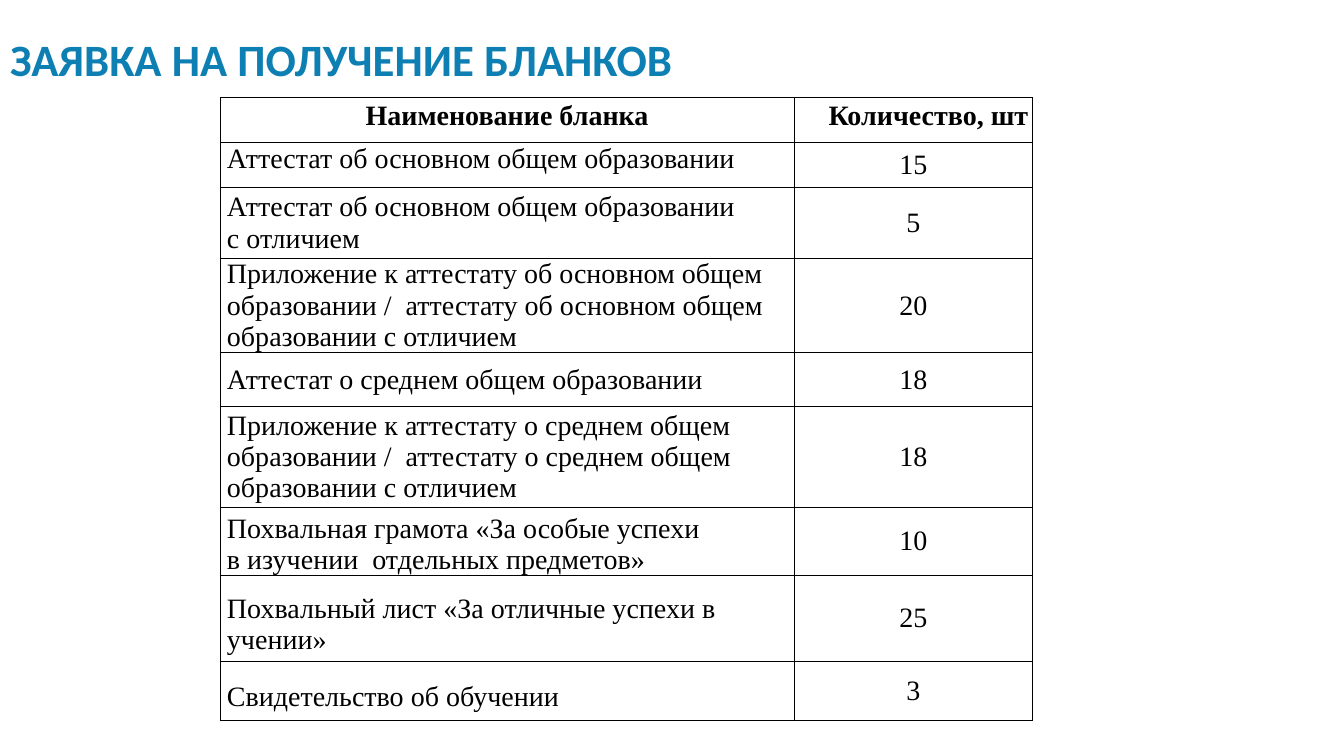
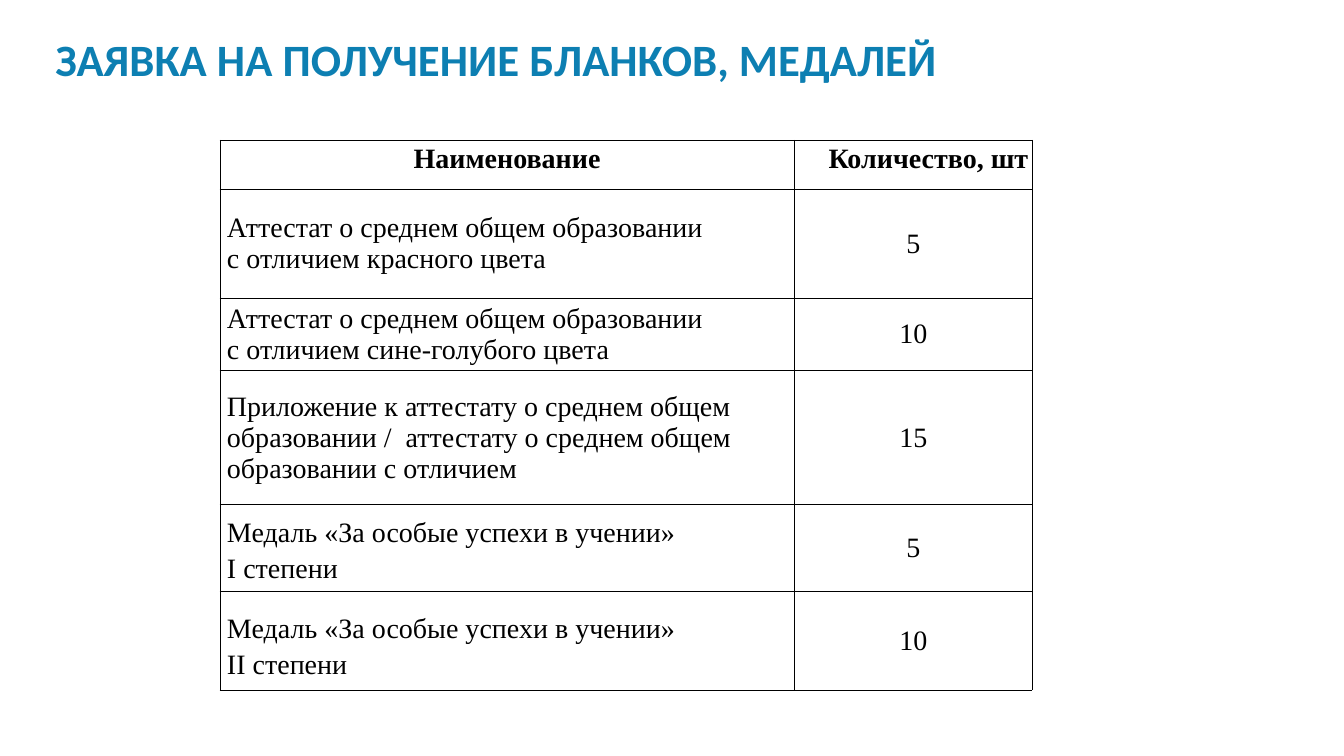
from lxml.etree import SubElement
from pptx import Presentation
from pptx.dml.color import RGBColor
from pptx.enum.text import MSO_ANCHOR as ANCHOR, MSO_AUTO_SIZE as AUTO, PP_ALIGN as ALIGN
from pptx.oxml.ns import qn
from pptx.util import Cm, Pt

BLUE, BLACK = "0D7FB2", "000000"
TITLE = dict(name="Calibri", size=Pt(32), bold=True)
HEAD = dict(name="Times New Roman", size=Pt(20), bold=True)
BODY = dict(HEAD, bold=False)
BORDER = Pt(0.5)
TABLE_LEFT = 5.54
COLUMNS = (14.48, 5.99)
INDENT = 0.18

FORMS = [
    ("Аттестат об основном общем образовании", "15", 1.14, dict(line=Pt(13.4))),
    ("Аттестат об основном общем образовании\nс отличием", "5", 1.8, {}),
    ("Приложение к аттестату об основном общем образовании /  "
     "аттестату об основном общем образовании с отличием", "20", 2.36, {}),
    ("Аттестат о среднем общем образовании", "18", 1.37, {}),
    ("Приложение к аттестату о среднем общем образовании /  "
     "аттестату о среднем общем образовании с отличием", "18", 2.54, {}),
    ("Похвальная грамота «За особые успехи\vв изучении  отдельных предметов»",
     "10", 1.71, dict(top=0.13)),
    ("Похвальный лист «За отличные успехи в учении»", "25", 2.16, dict(top=0.33)),
    ("Свидетельство об обучении", "3", 1.5, dict(top=0.33)),
]
MEDALS = [
    ("Аттестат о среднем общем образовании\nс отличием красного цвета", "5", 2.74, {}),
    ("Аттестат о среднем общем образовании\nс отличием сине-голубого цвета",
     "10", 1.83, {}),
    ("Приложение к аттестату о среднем общем образовании /  "
     "аттестату о среднем общем образовании с отличием", "15", 3.38, {}),
    ("Медаль «За особые успехи в учении»\nI степени", "5", 2.18,
     dict(top=0.13, gap=3.7)),
    ("Медаль «За особые успехи в учении»\nII степени", "10", 2.49,
     dict(top=0.33, gap=3.7)),
]


def rgb(value):
    return RGBColor.from_string(value)


def apply(target, values):
    for key, value in values.items():
        setattr(target, key, value)


def write(tf, text, font, color, align=ALIGN.LEFT, line=None, gap=0):
    tf.text = text
    for i, p in enumerate(tf.paragraphs):
        apply(p, dict(alignment=align, line_spacing=line,
                      space_before=Pt(gap if i else 0)))
        for r in p.runs:
            apply(r.font, font)
            r.font.color.rgb = rgb(color)


def add_title(s, text, left, width):
    sp = s.shapes.title
    apply(sp, dict(left=Cm(left), top=Cm(0), width=Cm(width), height=Cm(3.1)))
    apply(sp.text_frame, dict(word_wrap=True, auto_size=AUTO.NONE,
                              vertical_anchor=ANCHOR.MIDDLE))
    write(sp.text_frame, text, TITLE, BLUE, line=0.9)


def add_borders(cell):
    tc_pr = cell._tc.get_or_add_tcPr()
    for side in ("a:lnL", "a:lnR", "a:lnT", "a:lnB"):
        ln = SubElement(tc_pr, qn(side), w=str(BORDER))
        SubElement(SubElement(ln, qn("a:solidFill")), qn("a:srgbClr"), val=BLACK)


def fill_cell(cell, text, font, anchor=ANCHOR.MIDDLE, left=0, top=0, **style):
    apply(cell, dict(margin_left=Cm(left), margin_top=Cm(top), margin_right=0,
                     margin_bottom=0, vertical_anchor=anchor))
    add_borders(cell)
    cell.fill.background()
    write(cell.text_frame, text, font, BLACK, **style)


def add_order_table(s, top, head, head_height, rows):
    heights = [head_height] + [row[2] for row in rows]
    table = s.shapes.add_table(len(heights), len(COLUMNS), Cm(TABLE_LEFT), Cm(top),
                               Cm(sum(COLUMNS)), Cm(sum(heights))).table
    apply(table, dict(first_row=False, horz_banding=False))
    for column, width in zip(table.columns, COLUMNS):
        column.width = Cm(width)
    for row, height in zip(table.rows, heights):
        row.height = Cm(height)
    header = dict(font=HEAD, anchor=ANCHOR.TOP, top=0.08)
    fill_cell(table.cell(0, 0), head, align=ALIGN.CENTER, **header)
    fill_cell(table.cell(0, 1), "Количество, шт", left=0.86, **header)
    for i, (name, count, _, style) in enumerate(rows, 1):
        fill_cell(table.cell(i, 0), name, BODY, left=INDENT, **style)
        fill_cell(table.cell(i, 1), count, BODY, align=ALIGN.CENTER)


def add_order_slide(prs, title, left, width, **table):
    s = prs.slides.add_slide(prs.slide_layouts.get_by_name("Title Only"))
    add_title(s, title, left, width)
    add_order_table(s, **table)


def main():
    prs = Presentation()
    apply(prs, dict(slide_width=Cm(33.87), slide_height=Cm(19.05)))
    add_order_slide(prs, "ЗАЯВКА НА ПОЛУЧЕНИЕ БЛАНКОВ", 0, 22.76,
                    top=2.46, head="Наименование бланка", head_height=1.12, rows=FORMS)
    add_order_slide(prs, "ЗАЯВКА НА ПОЛУЧЕНИЕ БЛАНКОВ, МЕДАЛЕЙ", 1.14, 23.8,
                    top=3.53, head="Наименование", head_height=1.24, rows=MEDALS)
    prs.save("out.pptx")


if __name__ == "__main__":
    main()
